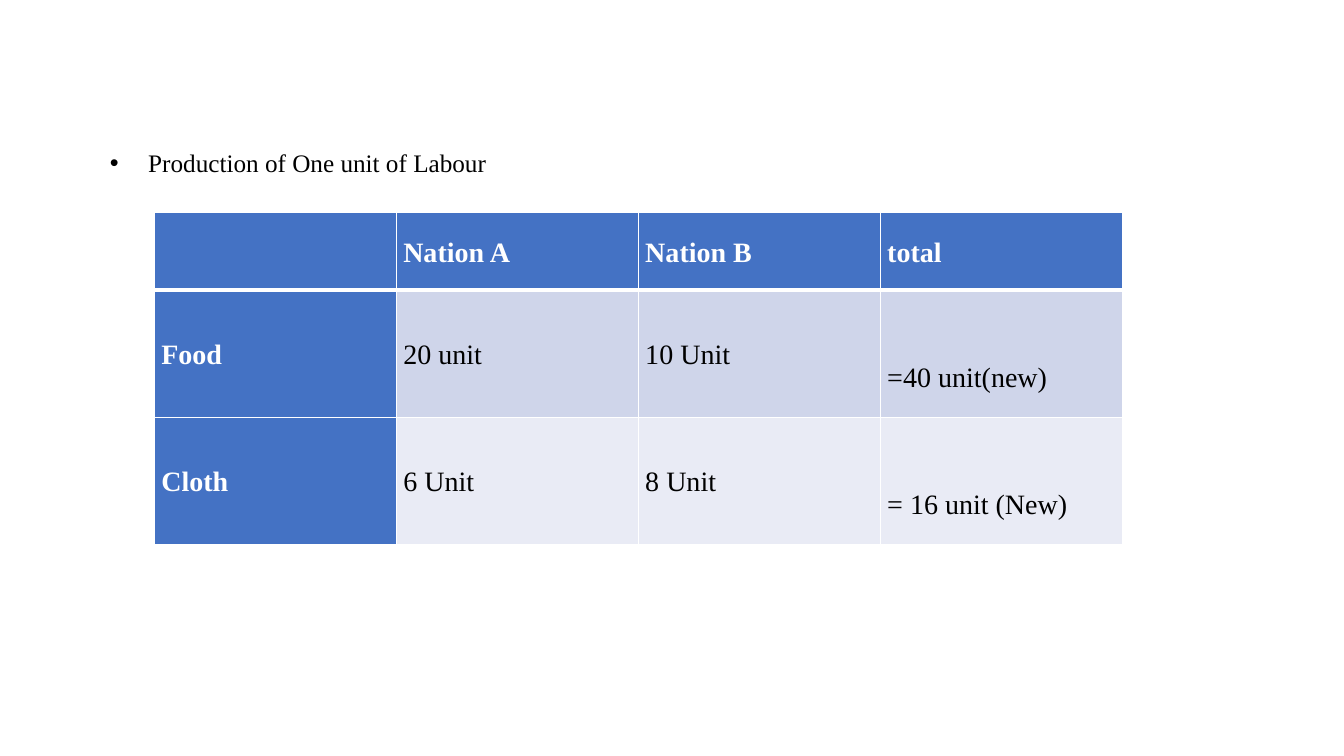
import dataclasses

import lxml.etree
import pptx
import pptx.dml.color
import pptx.enum.text
import pptx.oxml.ns
import pptx.util

Inches = pptx.util.Inches
Pt = pptx.util.Pt
qn = pptx.oxml.ns.qn

FONT = "Times New Roman"
WHITE, BLACK, BLUE = "FFFFFF", "000000", "4472C4"
COLUMN_WIDTH = 2.4
HEADER_RULE, THIN_RULE = 3, 1


@dataclasses.dataclass(frozen=True)
class OutputRow:
    values: tuple[str, ...]
    height: float
    fill: str
    total_drop: float = 0


OUTPUT_ROWS = (
    OutputRow(("", "Nation A", "Nation B", "total"), 0.77, BLUE),
    OutputRow(("Food", "20 unit", "10 Unit", "=40 unit(new)"), 1.26, "CFD5EA", 0.45),
    OutputRow(("Cloth", "6 Unit", "8 Unit", "= 16 unit (New)"), 1.26, "E9EBF5", 0.45),
)


def rgb(value: str) -> pptx.dml.color.RGBColor:
    return pptx.dml.color.RGBColor.from_string(value)


def format_paragraph(paragraph, size: float, color: str, bold: bool = False) -> None:
    paragraph.line_spacing = 1.07
    paragraph.space_before = Pt(0)
    paragraph.space_after = Pt(8)
    for run in paragraph.runs:
        run.font.name = FONT
        run.font.size = Pt(size)
        run.font.bold = bold
        run.font.color.rgb = rgb(color)


def add_borders(cell, top: float, bottom: float) -> None:
    """Draw white cell borders; call before the fill, which must follow them."""
    properties = cell._tc.get_or_add_tcPr()
    widths = {"lnL": THIN_RULE, "lnR": THIN_RULE, "lnT": top, "lnB": bottom}
    for side, width in widths.items():
        line = lxml.etree.SubElement(properties, qn(f"a:{side}"), w=str(Pt(width)))
        solid = lxml.etree.SubElement(line, qn("a:solidFill"))
        lxml.etree.SubElement(solid, qn("a:srgbClr"), val=WHITE)


def add_caption(slide, wording: str) -> None:
    caption = slide.placeholders[1]
    caption.left, caption.top = Inches(0.99), Inches(1.39)
    caption.width, caption.height = Inches(11.6), Inches(0.41)
    frame = caption.text_frame
    frame.text = wording
    frame.word_wrap = True
    frame.auto_size = pptx.enum.text.MSO_AUTO_SIZE.SHAPE_TO_FIT_TEXT
    frame.vertical_anchor = pptx.enum.text.MSO_ANCHOR.TOP
    paragraph = frame.paragraphs[0]
    format_paragraph(paragraph, 18, BLACK)
    properties = paragraph._p.get_or_add_pPr()
    properties.set("marL", str(Inches(0.38)))
    properties.set("indent", str(Inches(-0.38)))
    lxml.etree.SubElement(properties, qn("a:buFont"), typeface="Arial")
    lxml.etree.SubElement(properties, qn("a:buChar"), char="•")


def fill_cell(cell, row_index: int, column_index: int) -> None:
    row = OUTPUT_ROWS[row_index]
    is_heading = row_index == 0 or column_index == 0
    is_total = column_index == len(row.values) - 1
    cell.text_frame.text = row.values[column_index]
    cell.vertical_anchor = pptx.enum.text.MSO_ANCHOR.MIDDLE
    cell.margin_left = cell.margin_right = Inches(0.07)
    cell.margin_top = Inches(row.total_drop if is_total else 0)
    cell.margin_bottom = Inches(0)
    format_paragraph(
        cell.text_frame.paragraphs[0], 20, WHITE if is_heading else BLACK, is_heading
    )
    add_borders(
        cell,
        top=HEADER_RULE if row_index == 1 else THIN_RULE,
        bottom=HEADER_RULE if row_index == 0 else THIN_RULE,
    )
    cell.fill.solid()
    cell.fill.fore_color.rgb = rgb(BLUE if is_heading else row.fill)


def add_output_table(slide) -> None:
    column_count = len(OUTPUT_ROWS[0].values)
    output = slide.shapes.add_table(
        len(OUTPUT_ROWS),
        column_count,
        Inches(1.53),
        Inches(2.11),
        Inches(COLUMN_WIDTH * column_count),
        Inches(sum(row.height for row in OUTPUT_ROWS)),
    ).table
    output.first_col = True
    for column in output.columns:
        column.width = Inches(COLUMN_WIDTH)
    for row_index, row in enumerate(OUTPUT_ROWS):
        output.rows[row_index].height = Inches(row.height)
        for column_index in range(column_count):
            fill_cell(output.cell(row_index, column_index), row_index, column_index)


def main() -> None:
    deck = pptx.Presentation()
    deck.slide_width, deck.slide_height = Inches(13.33), Inches(7.5)
    slide = deck.slides.add_slide(deck.slide_layouts[1])
    unused_title = slide.shapes.title.element
    unused_title.getparent().remove(unused_title)
    add_caption(slide, "Production of One unit of Labour")
    add_output_table(slide)
    deck.save("out.pptx")


if __name__ == "__main__":
    main()
